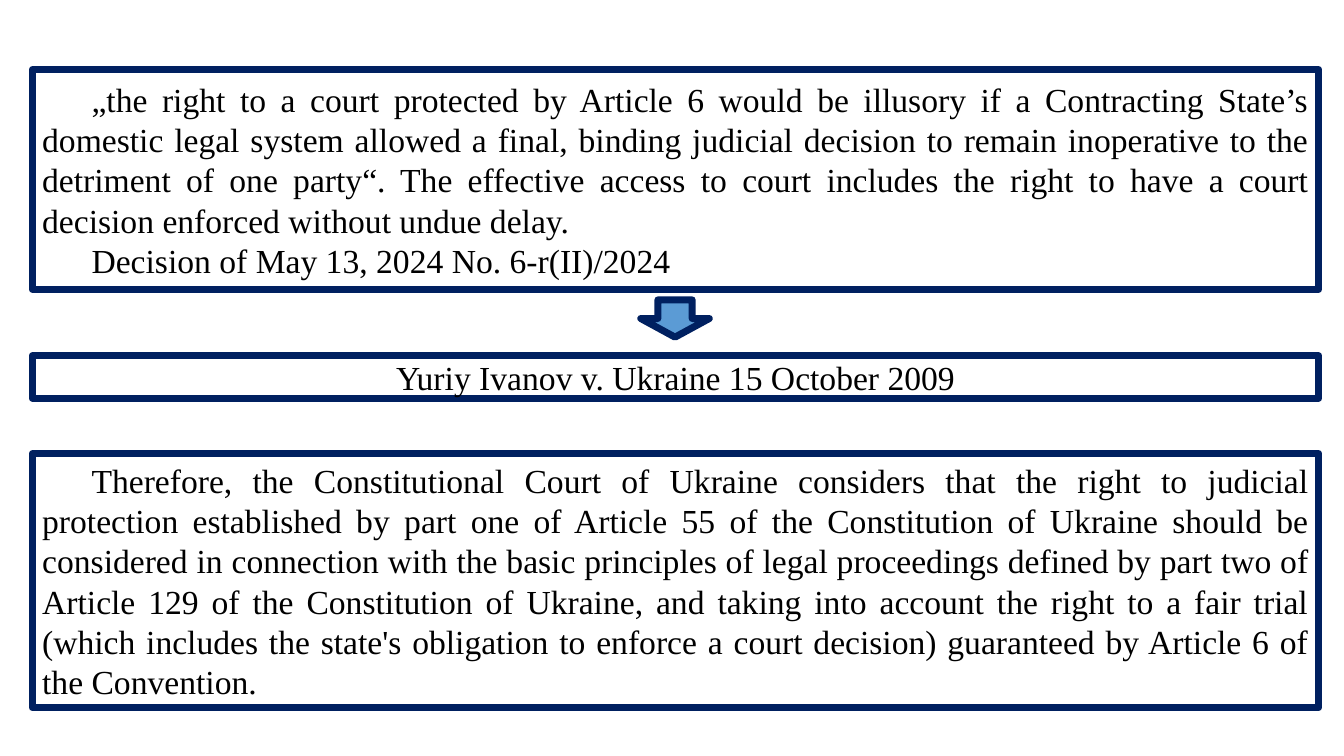
from pptx import Presentation
from pptx import util as u
from pptx.dml.color import RGBColor
from pptx.enum import shapes, text

NAVY = RGBColor(0x00, 0x20, 0x60)
BLUE = RGBColor(0x5B, 0x9B, 0xD5)
WHITE = RGBColor(0xFF, 0xFF, 0xFF)
BLACK = RGBColor(0x00, 0x00, 0x00)

BOX_LEFT, BOX_WIDTH = 0.32, 12.76

QUOTE = (
    "„the right to a court protected by Article 6 would be illusory if a Contracting "
    "State’s domestic legal system allowed a final, binding judicial decision to remain "
    "inoperative to the detriment of one party“. The effective access to court includes "
    "the right to have a court decision enforced without undue delay."
)
DECISION = "Decision of May 13, 2024 No. 6-r(II)/2024"
CASE = "Yuriy Ivanov v. Ukraine 15 October 2009"
CONCLUSION = (
    "Therefore, the Constitutional Court of Ukraine considers that the right to judicial "
    "protection established by part one of Article 55 of the Constitution of Ukraine "
    "should be considered in connection with the basic principles of legal proceedings "
    "defined by part two of Article 129 of the Constitution of Ukraine, and taking into "
    "account the right to a fair trial (which includes the state's obligation to enforce "
    "a court decision) guaranteed by Article 6 of the Convention."
)


def write_paragraph(paragraph, content, *, align, indent=0, size=24,
                    font="Times New Roman", color=BLACK):
    """Fill a paragraph with one formatted run."""
    paragraph.alignment = align
    if indent:
        properties = paragraph._p.get_or_add_pPr()
        properties.set("marL", "0")
        properties.set("indent", str(u.Inches(indent)))
    run = paragraph.add_run()
    run.text = content
    run.font.size = u.Pt(size)
    run.font.name = font
    run.font.color.rgb = color


class SlideBuilder:
    """Holds the outline style and the current slide."""

    def __init__(self, slide, line_color=NAVY, line_width=5):
        self.slide = slide
        self.line_color = line_color
        self.line_width = line_width

    def outlined(self, kind, left, top, width, height, fill):
        shape = self.slide.shapes.add_shape(
            kind, u.Inches(left), u.Inches(top), u.Inches(width), u.Inches(height))
        shape.shadow.inherit = False
        shape.fill.solid()
        shape.fill.fore_color.rgb = fill
        shape.line.color.rgb = self.line_color
        shape.line.width = u.Pt(self.line_width)
        return shape

    def text_box(self, top, height, paragraphs, **style):
        shape = self.outlined(shapes.MSO_SHAPE.RECTANGLE,
                              BOX_LEFT, top, BOX_WIDTH, height, WHITE)
        frame = shape.text_frame
        frame.word_wrap = True
        frame.vertical_anchor = text.MSO_ANCHOR.MIDDLE
        for index, content in enumerate(paragraphs):
            paragraph = frame.add_paragraph() if index else frame.paragraphs[0]
            write_paragraph(paragraph, content, **style)

    def down_arrow(self, left, top, width, height):
        shape = self.outlined(shapes.MSO_SHAPE.LEFT_ARROW,
                              left, top, width, height, BLUE)
        shape.rotation = 270


def main():
    presentation = Presentation()
    presentation.slide_width = u.Inches(13.33)
    presentation.slide_height = u.Inches(7.5)
    builder = SlideBuilder(presentation.slides.add_slide(presentation.slide_layouts[6]))
    body = {"align": text.PP_ALIGN.JUSTIFY, "indent": 0.49}

    # Court decision
    builder.text_box(0.69, 2.18, [QUOTE, DECISION], **body)
    builder.down_arrow(6.51, 2.82, 0.37, 0.68)

    # Cited case
    builder.text_box(3.53, 0.42, [CASE], align=text.PP_ALIGN.CENTER)

    # Conclusion
    builder.text_box(4.5, 2.52, [CONCLUSION], **body)

    presentation.save("out.pptx")


if __name__ == "__main__":
    main()
